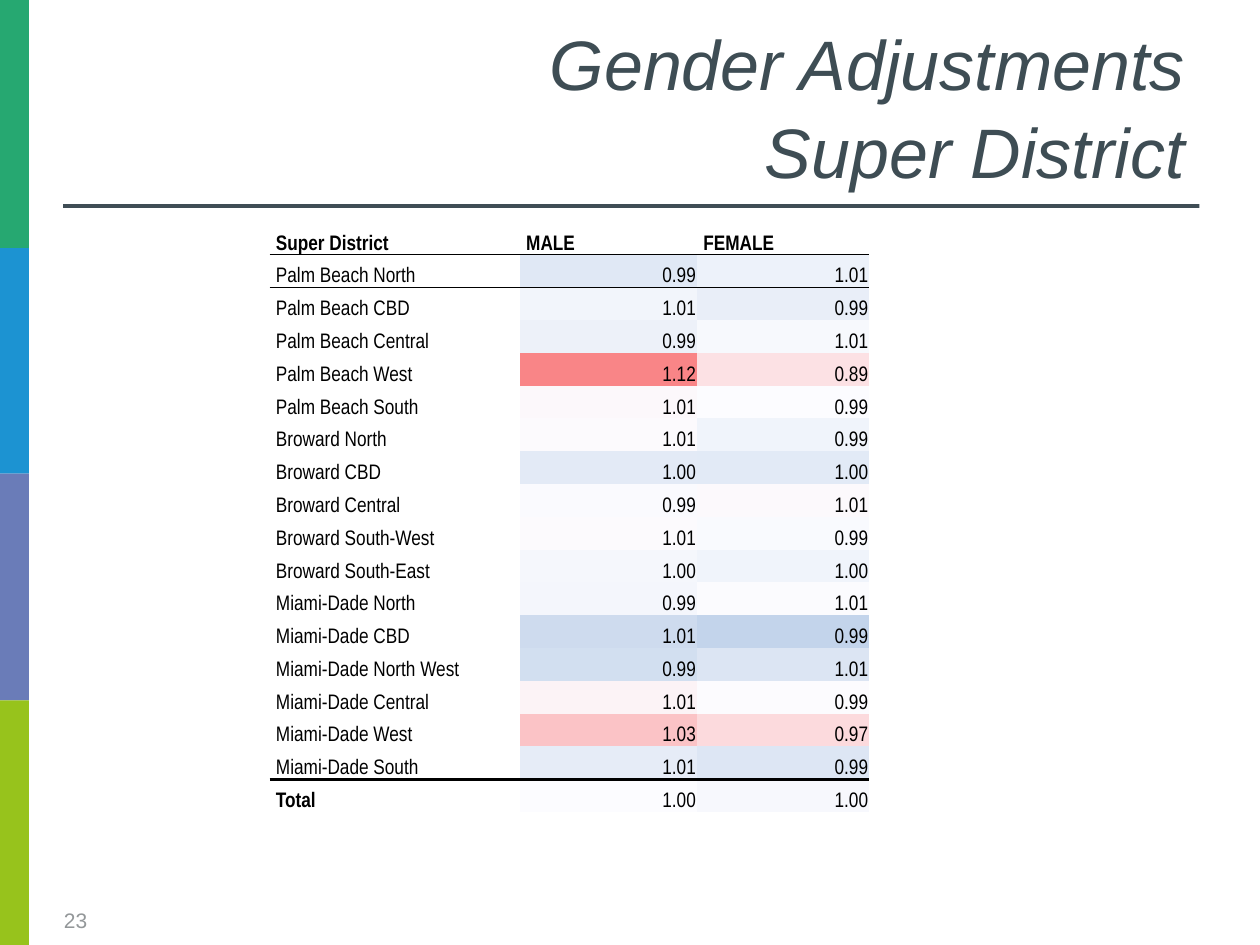
from lxml.etree import SubElement
from pptx import Presentation
from pptx.dml.color import RGBColor
from pptx.enum.shapes import MSO_SHAPE as Shape
from pptx.enum.text import MSO_ANCHOR as Anchor, PP_ALIGN as Align
from pptx.oxml.ns import qn
from pptx.util import Inches, Pt

GREEN = RGBColor(0x26, 0xA8, 0x71)
BLUE = RGBColor(0x1C, 0x93, 0xD2)
VIOLET = RGBColor(0x6A, 0x7C, 0xB8)
LIME = RGBColor(0x97, 0xC3, 0x1C)
SLATE = RGBColor(0x3F, 0x4D, 0x55)
TITLE_SLATE = RGBColor(0x3E, 0x4D, 0x54)
GREY = RGBColor(0x93, 0x97, 0x99)
BLACK = RGBColor(0, 0, 0)

PLAIN_STYLE = "{2D5ABB26-0587-4C30-8999-92F81FD0307C}"
HEADINGS = ("Super District", "MALE", "FEMALE")
DISTRICTS = (
    ("Palm Beach North", "0.99", "E0E8F5", "1.01", "EDF2FA"),
    ("Palm Beach CBD", "1.01", "F2F5FB", "0.99", "E9EEF8"),
    ("Palm Beach Central", "0.99", "EDF1F9", "1.01", "F7F9FD"),
    ("Palm Beach West", "1.12", "F98587", "0.89", "FCE1E4"),
    ("Palm Beach South", "1.01", "FCF8FB", "0.99", "FCFCFF"),
    ("Broward North", "1.01", "FCFAFD", "0.99", "F0F4FB"),
    ("Broward CBD", "1.00", "E3EAF6", "1.00", "E2EAF6"),
    ("Broward Central", "0.99", "FAFAFE", "1.01", "FCF9FC"),
    ("Broward South-West", "1.01", "FCFAFD", "0.99", "F9FAFE"),
    ("Broward South-East", "1.00", "F5F7FC", "1.00", "F0F4FB"),
    ("Miami-Dade North", "0.99", "F4F6FC", "1.01", "FBFBFE"),
    ("Miami-Dade CBD", "1.01", "CEDBEE", "0.99", "C3D4EB"),
    ("Miami-Dade North West", "0.99", "D2DFF0", "1.01", "DCE5F3"),
    ("Miami-Dade Central", "1.01", "FCF3F6", "0.99", "FCFBFE"),
    ("Miami-Dade West", "1.03", "FBC3C6", "0.97", "FCDADD"),
    ("Miami-Dade South", "1.01", "E6ECF7", "0.99", "DDE6F4"),
    ("Total", "1.00", "FCFCFF", "1.00", "F7F8FD"),
)


def add_block(page, left, top, width, height, color):
    """Add a plain filled rectangle."""
    block = page.shapes.add_shape(Shape.RECTANGLE, left, top, width, height)
    block.shadow.inherit = False
    block.fill.solid()
    block.fill.fore_color.rgb = color
    block.line.fill.background()


def add_side_band(page, left, top, width):
    """Stack the coloured blocks down the page edge."""
    blocks = ((1.97, GREEN), (1.79, BLUE), (1.8, VIOLET), (1.94, LIME))
    for height, color in blocks:
        add_block(page, left, top, width, Inches(height), color)
        top += Inches(height)


def add_label(page, left, top, width, height, text, size, color, anchor):
    """Add a text box and return its paragraph."""
    box = page.shapes.add_textbox(left, top, width, height)
    frame = box.text_frame
    frame.word_wrap = True
    frame.vertical_anchor = anchor
    frame.text = text
    para = frame.paragraphs[0]
    para.font.name = "Arial"
    para.font.size = Pt(size)
    para.font.color.rgb = color
    return para


def add_title(page, left, top, width, height):
    """Place the italic title with the rule under it."""
    para = add_label(page, left, top, width, height,
                     "Gender Adjustments\vSuper District", 40, TITLE_SLATE, Anchor.BOTTOM)
    para.alignment = Align.RIGHT
    para.line_spacing = 1.05
    para.font.italic = True
    add_block(page, left, top + height + Inches(0.04), Inches(9.02), Inches(0.03), SLATE)


def set_border(cell, side, points):
    """Draw a black line along one side of a cell."""
    line = SubElement(cell._tc.get_or_add_tcPr(), qn(f"a:{side}"), w=str(Pt(points)))
    fill = SubElement(line, qn("a:solidFill"))
    SubElement(fill, qn("a:srgbClr"), val=str(BLACK))


def write_cell(cell, text, bold=False, tint=None):
    """Fill a cell with a label, or with a right-aligned value on a tint."""
    cell.margin_left = Inches(0.01 if tint else 0.05)
    cell.margin_top = cell.margin_right = Inches(0.01)
    cell.margin_bottom = 0
    cell.vertical_anchor = Anchor.BOTTOM
    cell.text_frame.text = text
    para = cell.text_frame.paragraphs[0]
    para.alignment = Align.RIGHT if tint else Align.LEFT
    font = para.runs[0].font
    font.name = "Arial Narrow"
    font.size = Pt(12)
    font.bold = bold
    font.color.rgb = BLACK


def fill_cell(cell, tint):
    """Set the cell background, clear when there is no tint."""
    if tint:
        cell.fill.solid()
        cell.fill.fore_color.rgb = RGBColor.from_string(tint)
    else:
        cell.fill.background()


def add_district_table(page, left, top, width, height):
    """Build the table of adjustments by super district."""
    rows = [[(name, None) for name in HEADINGS]]
    rows += [[(name, None), (male, male_tint), (female, female_tint)]
             for name, male, male_tint, female, female_tint in DISTRICTS]
    last = len(rows) - 1
    table = page.shapes.add_table(len(rows), 3, left, top, width, height).table
    table.first_row = table.horz_banding = False
    table._tbl.tblPr.find(qn("a:tableStyleId")).text = PLAIN_STYLE
    for column, share in zip(table.columns, (1.99, 1.41, 1.37)):
        column.width = int(width * share / 4.77)
    header = Inches(0.21)
    borders = {0: ("lnB", 1), 1: ("lnT", 1), last - 1: ("lnB", 2), last: ("lnT", 2)}
    for index, row in enumerate(rows):
        table.rows[index].height = header if index == 0 else int((height - header) / last)
        for column, (text, tint) in enumerate(row):
            cell = table.cell(index, column)
            bold = index == 0 or (index == last and column == 0)
            write_cell(cell, text, bold, tint)
            if index in borders:
                set_border(cell, *borders[index])
            fill_cell(cell, tint)


def main():
    """Build and save the slide."""
    deck = Presentation()
    deck.slide_width, deck.slide_height = Inches(10), Inches(7.5)
    page = deck.slides.add_slide(deck.slide_layouts[6])
    add_side_band(page, 0, 0, Inches(0.23))
    add_title(page, Inches(0.5), Inches(-0.01), Inches(9), Inches(1.59))
    add_label(page, Inches(0.41), Inches(7.1), Inches(0.73), Inches(0.4),
              "23", 12, GREY, Anchor.MIDDLE)
    add_district_table(page, Inches(2.14), Inches(1.81), Inches(4.76), Inches(4.64))
    deck.save("out.pptx")


if __name__ == "__main__":
    main()
